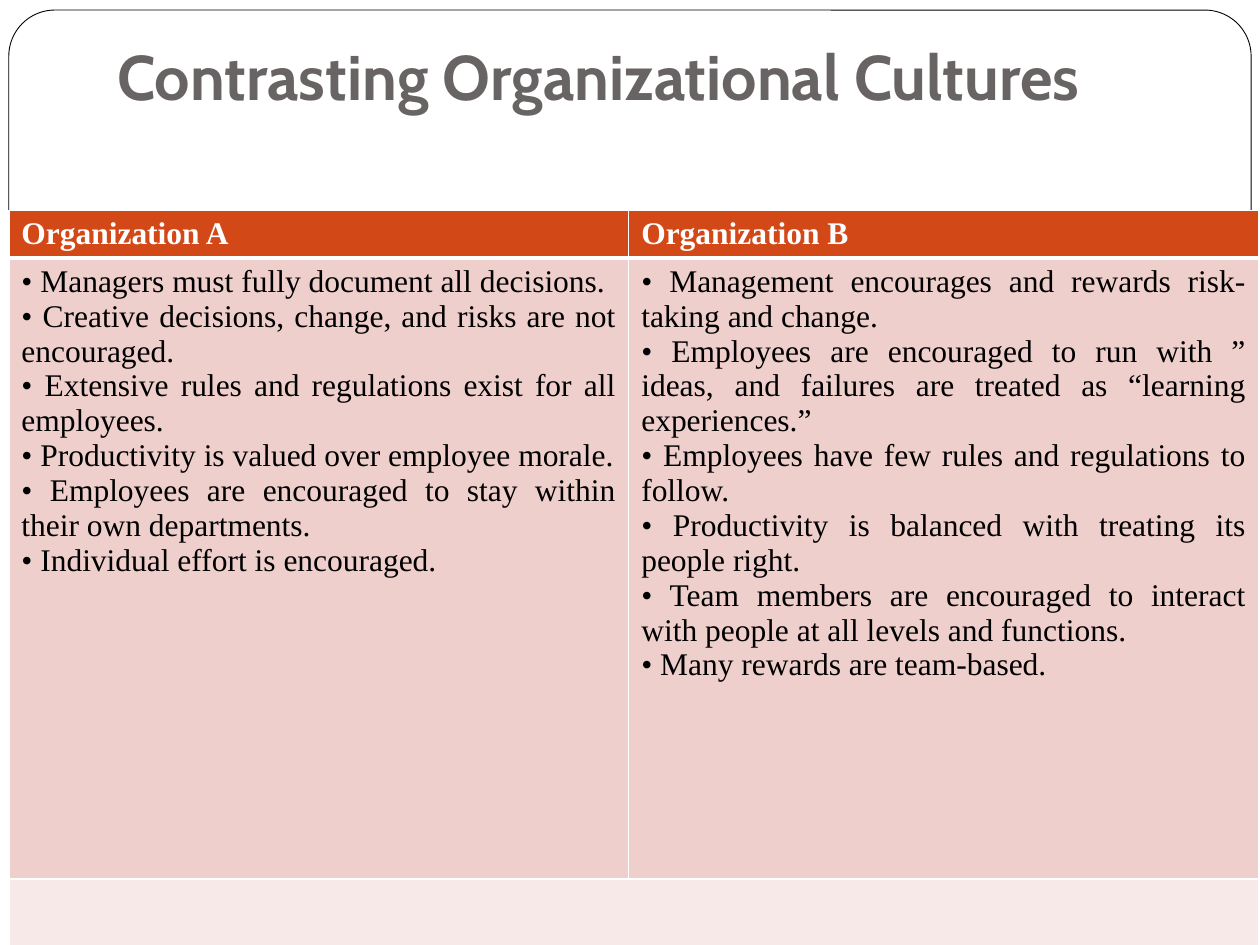
import lxml.etree
import pptx
import pptx.dml.color
import pptx.enum.shapes
import pptx.enum.text
import pptx.oxml.ns
import pptx.util

Inches, Pt = pptx.util.Inches, pptx.util.Pt
qn = pptx.oxml.ns.qn


def color(hex_string):
    return pptx.dml.color.RGBColor.from_string(hex_string)


def add_border(cell, side, points):
    line = lxml.etree.SubElement(cell._tc.get_or_add_tcPr(), qn("a:" + side), w=str(Pt(points)))
    fill = lxml.etree.SubElement(line, qn("a:solidFill"))
    lxml.etree.SubElement(fill, qn("a:srgbClr"), val="FFFFFF")


prs = pptx.Presentation()
prs.slide_width, prs.slide_height = Inches(10), Inches(7.5)
slide = prs.slides.add_slide(prs.slide_layouts[5])

# Rounded frame, sent behind the title
frame = slide.shapes.add_shape(
    pptx.enum.shapes.MSO_SHAPE.ROUNDED_RECTANGLE,
    Inches(0.07), Inches(0.08), Inches(9.86), Inches(7.32))
frame.adjustments[0] = 0.05
frame.shadow.inherit = False
frame.fill.solid()
frame.fill.fore_color.rgb = color("FFFFFF")
frame.line.color.rgb = color("000000")
frame.line.width = Pt(0.5)
slide.shapes.element.insert(2, frame.element)

# Title, indented by one inch
title = slide.shapes.title
title.left, title.top = Inches(-0.17), Inches(0.3)
title.width, title.height = Inches(9.67), Inches(0.7)
heading = title.text_frame
heading.text = "Contrasting Organizational Cultures"
heading.auto_size = pptx.enum.text.MSO_AUTO_SIZE.NONE
heading.vertical_anchor = pptx.enum.text.MSO_ANCHOR.BOTTOM
heading.margin_left, heading.margin_right = Inches(1.1), Inches(0.1)
heading.margin_top, heading.margin_bottom = Inches(0.05), Inches(0.1)
heading.paragraphs[0].alignment = pptx.enum.text.PP_ALIGN.LEFT
heading_font = heading.paragraphs[0].runs[0].font
heading_font.name, heading_font.size, heading_font.bold = "Cabin", Pt(36), True
heading_font.color.rgb = color("696464")

# Comparison table: a heading and its statements per column
cultures = {
    "Organization A": [
        "Managers must fully document all decisions.",
        "Creative decisions, change, and risks are not encouraged.",
        "Extensive rules and regulations exist for all employees.",
        "Productivity is valued over employee morale.",
        "Employees are encouraged to stay within their own departments.",
        "Individual effort is encouraged.",
    ],
    "Organization B": [
        "Management encourages and rewards risk-taking and change.",
        "Employees are encouraged to run with ” ideas, and failures are treated as “learning experiences.”",
        "Employees have few rules and regulations to follow.",
        "Productivity is balanced with treating its people right.",
        "Team members are encouraged to interact with people at all levels and functions.",
        "Many rewards are team-based.",
    ],
}
comparison = slide.shapes.add_table(
    3, 2, Inches(0.07), Inches(1.67), Inches(9.92), Inches(6.35)).table
for column, width in zip(comparison.columns, [4.92, 5]):
    column.width = Inches(width)

row_heights = [0.28, 4.93, 1.14]
row_fills = ["D34817", "EFCFCC", "F7E9E8"]
for row, height, row_fill in zip(comparison.rows, row_heights, row_fills):
    row.height = Inches(height)
    is_header = row_fill == row_fills[0]
    below_header = row_fill == row_fills[1]
    for cell in row.cells:
        add_border(cell, "lnL", 1)
        add_border(cell, "lnR", 1)
        add_border(cell, "lnT", 3 if below_header else 1)
        add_border(cell, "lnB", 3 if is_header else 1)
        cell.fill.solid()
        cell.fill.fore_color.rgb = color(row_fill)
comparison.cell(2, 0).merge(comparison.cell(2, 1))

for index, (organization, statements) in enumerate(cultures.items()):
    header, body = comparison.cell(0, index), comparison.cell(1, index)
    header.text_frame.text = organization
    body.text_frame.text = "\n".join("• " + statement for statement in statements)
    for paragraph in body.text_frame.paragraphs:
        paragraph.alignment = pptx.enum.text.PP_ALIGN.JUSTIFY
    for cell, text_color, bold in [(header, "FFFFFF", True), (body, "000000", False)]:
        for paragraph in cell.text_frame.paragraphs:
            font = paragraph.runs[0].font
            font.name, font.size, font.bold = "Times New Roman", Pt(18), bold
            font.color.rgb = color(text_color)

prs.save("out.pptx")
